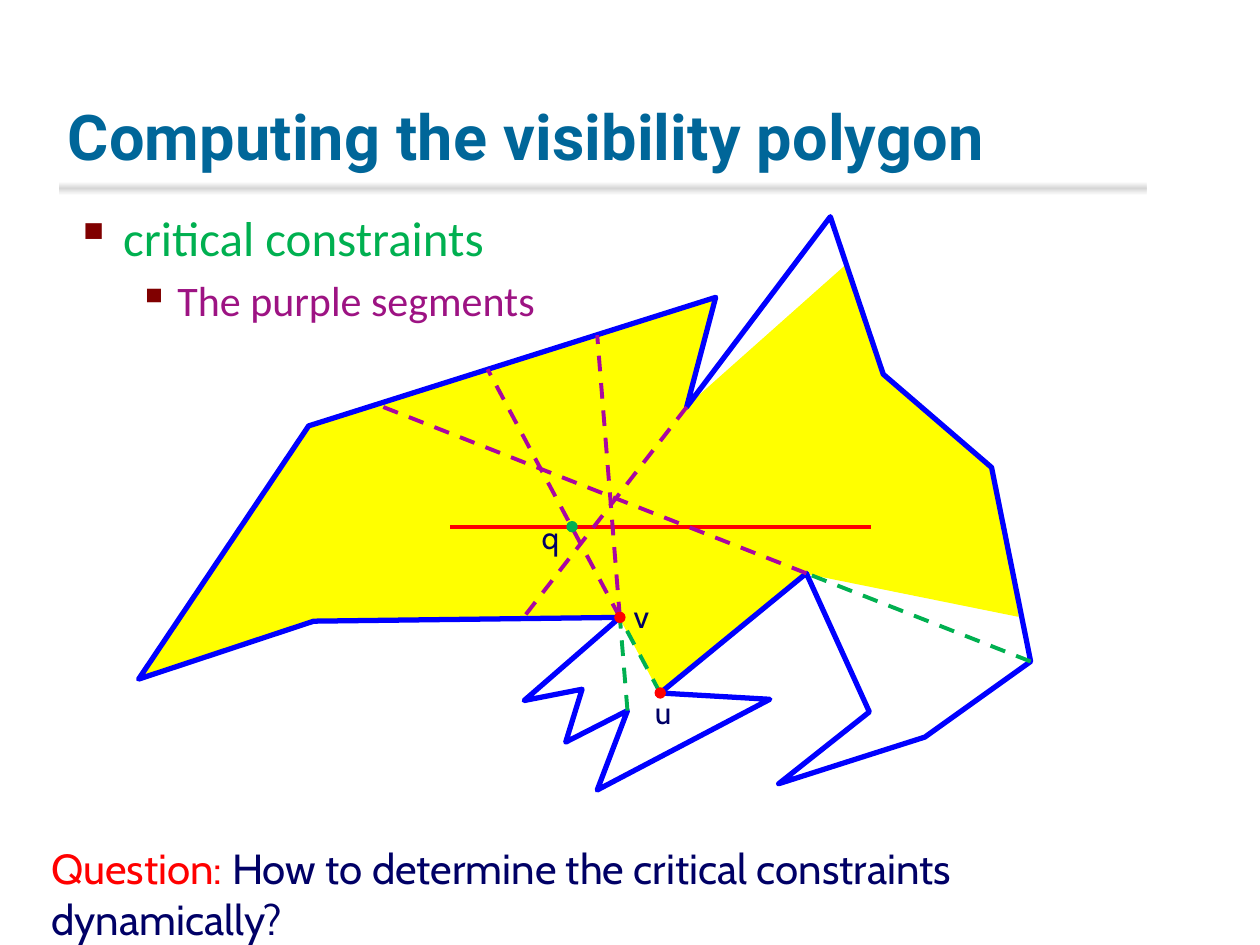
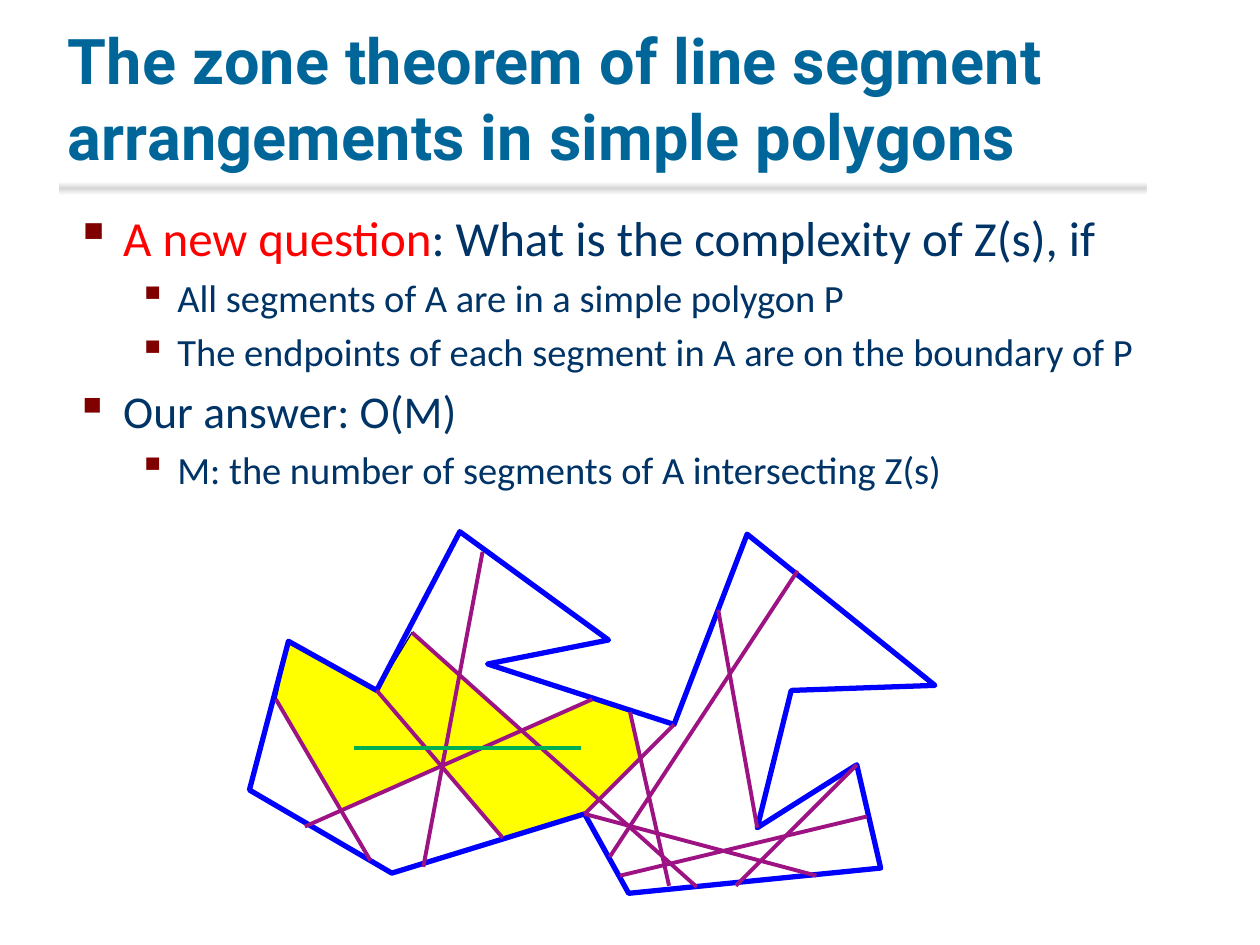
from copy import deepcopy

from lxml import etree
from pptx import Presentation
from pptx.dml.color import RGBColor
from pptx.enum.dml import MSO_LINE
from pptx.enum.shapes import MSO_CONNECTOR, MSO_SHAPE
from pptx.enum.text import MSO_ANCHOR
from pptx.oxml.ns import qn
from pptx.util import Pt

PX = 9144  # EMU per px, 100 px to the inch

TEAL = RGBColor.from_string("006699")
NAVY = RGBColor.from_string("000066")
DARK_BLUE = RGBColor.from_string("003366")
BLUE = RGBColor.from_string("0000FF")
RED = RGBColor.from_string("FF0000")
GREEN = RGBColor.from_string("00B050")
PURPLE = RGBColor.from_string("9D1383")
VIOLET = RGBColor.from_string("A907A1")
MAROON = RGBColor.from_string("800000")
YELLOW = RGBColor.from_string("FFFF00")
WHITE = RGBColor.from_string("FFFFFF")
GRAY = RGBColor.from_string("D6D6D6")

TITLE_BOX = (44, 17, 850, 125)
BODY_BOX = (50, 160, 903, 254)
QUESTION_BOX = (31, 664, 905, 50)
BAND_BOX = (47, 144, 863, 11)
LABEL_SIZE = (33, 40)
DOT = 8
INDENTS = [(38, -38), (81, -31)]  # left margin and first line, by level

TITLE = {"name": "Roboto", "size": Pt(36), "bold": True}
BODY = {"name": "Calibri"}
H1 = {"size": Pt(28)}
H2 = {"size": Pt(26)}
SUB = {"size": Pt(22)}
LABEL = {"name": "Cabin", "size": Pt(18)}
QUESTION = {"name": "Cabin", "size": Pt(24)}

# Points have one-letter names; capitals are the polygon's corners in order.
# A crossing "ABCD" is where line AB meets line CD.
# Paragraphs are (level, runs), runs are (text, colour, format).
SLIDES = [
    {
        "title": "Computing the visibility polygon",
        "body": [
            (0, [("critical constraints", GREEN, H1)]),
            (1, [("The purple segments", PURPLE, {"size": Pt(24)})]),
        ],
        "polygon": "ABCDEFGHIJKLMNOPQRSTU",
        "points": dict(
            A=(249, 493), B=(492, 490), C=(416, 556), D=(462, 547),
            E=(449, 589), F=(498, 564), G=(474, 627), H=(611, 555),
            I=(524, 550), J=(640, 455), K=(690, 565), L=(618, 622),
            M=(734, 585), N=(818, 525), O=(787, 371), P=(701, 297),
            Q=(659, 172), R=(545, 323), S=(568, 236), T=(245, 338),
            U=(110, 539), a=(671, 211), b=(808, 489), c=(357, 418),
            d=(691, 418), h=(414, 492)),
        "crossings": dict(e="FBST", f="NJST", g="IBST", q="IBcd"),
        "region_line": YELLOW,
        "regions": "AUTSRaPObJIB",
        "segments": [(RED, False, "cd"), (GREEN, True, "IB FB NJ"),
                     (VIOLET, True, "Rh Be Jf Bg")],
        "dots": dict(I=RED, B=RED, q=GREEN),
        "labels": dict(u=(510, 545), v=(493, 469), q=(420, 406)),
        "question": [
            ("Question: ", RED, QUESTION),
            ("How to determine the critical constraints dynamically?",
             NAVY, QUESTION)],
    },
    {
        "title": "The zone theorem of line segment arrangements "
                 "in simple polygons",
        "body": [
            (0, [("A new question", RED, H1),
                 (": What is the complexity of Z(s), if", DARK_BLUE, H1)]),
            (1, [("All segments of A are in a simple polygon P",
                  DARK_BLUE, SUB)]),
            (1, [("The endpoints of each segment in A are on the "
                  "boundary of P", DARK_BLUE, SUB)]),
            (0, [("Our answer: O(M)", DARK_BLUE, H2)]),
            (1, [("M: the number of segments of A intersecting Z(s)",
                  DARK_BLUE, SUB)]),
        ],
        "polygon": "ABCDEFGHIJKLMNOP",
        "points": dict(
            A=(311, 693), B=(198, 627), C=(229, 509), D=(299, 548),
            E=(365, 422), F=(483, 508), G=(387, 527), H=(535, 575),
            I=(593, 424), J=(742, 544), K=(628, 548), L=(601, 657),
            M=(680, 607), N=(699, 689), O=(499, 709), P=(464, 646),
            a=(553, 704), b=(336, 688), c=(383, 438), d=(242, 656),
            e=(484, 680), f=(327, 502), g=(219, 555), h=(633, 453),
            j=(531, 703), k=(399, 665), l=(470, 555), m=(500, 565),
            n=(294, 683), o=(648, 695), p=(570, 484), q=(492, 695),
            r=(688, 648), s=(584, 703), t=(281, 594), u=(461, 594)),
        "crossings": dict(v="fadl", w="Dkdl", x="bcfa", y="gndl",
                          z="faPH", i="mjPH"),
        "region_line": NAVY,
        "regions": "vlmiz wvzPk wxv Dwxf gywDC",
        "segments": [
            (PURPLE, False, "fa bc dl eh mj PH Dk gn Po Lp qr sM"),
            (GREEN, False, "tu")],
        "dots": {},
        "labels": {},
        "question": [],
    },
]


def add_text(s, box, fmt, paragraphs):
    """Add a wrapped text box; a level of None means no bullet."""
    tf = s.shapes.add_textbox(*[n * PX for n in box]).text_frame
    tf.word_wrap = True
    for i, (level, runs) in enumerate(paragraphs):
        p = tf.paragraphs[0] if i == 0 else tf.add_paragraph()
        for text, colour, run_fmt in runs:
            r = p.add_run()
            r.text = text
            for name, value in {**fmt, **run_fmt}.items():
                setattr(r.font, name, value)
            r.font.color.rgb = colour
        if level is not None:
            pPr = p._p.get_or_add_pPr()
            for name, n in zip(("marL", "indent"), INDENTS[level]):
                pPr.set(name, str(n * PX))
            before = etree.SubElement(pPr, qn("a:spcBef"))
            etree.SubElement(before, qn("a:spcPct"), val="20000")
            colour = etree.SubElement(pPr, qn("a:buClr"))
            etree.SubElement(colour, qn("a:srgbClr"), val=str(MAROON))
            etree.SubElement(pPr, qn("a:buChar"), char="▪")
    return tf


def add_polygon(s, points, fill, line, width):
    """Add a closed outline; a fill of None leaves it open inside."""
    fb = s.shapes.build_freeform(*points[0], scale=PX)
    fb.add_line_segments(points[1:], close=True)
    sp = fb.convert_to_shape()
    sp.shadow.inherit = False
    if fill is None:
        sp.fill.background()
    else:
        sp.fill.solid()
        sp.fill.fore_color.rgb = fill
    sp.line.color.rgb = line
    sp.line.width = Pt(width)


prs = Presentation()
prs.slide_width = 1000 * PX
prs.slide_height = 750 * PX

for content in SLIDES:
    s = prs.slides.add_slide(prs.slide_layouts[6])

    points = dict(content["points"])
    for name, lines in content["crossings"].items():
        (ax, ay), (bx, by), (cx, cy), (dx, dy) = [points[n] for n in lines]
        ux, uy, vx, vy = bx - ax, by - ay, dx - cx, dy - cy
        t = ((cx - ax) * vy - (cy - ay) * vx) / (ux * vy - uy * vx)
        points[name] = (round(ax + t * ux), round(ay + t * uy))

    # Soft band under the title, white to gray to white
    band = s.shapes.add_shape(MSO_SHAPE.RECTANGLE, *[n * PX for n in BAND_BOX])
    band.shadow.inherit = False
    band.line.fill.background()
    band.fill.gradient()
    band.fill.gradient_angle = 90
    for stop, colour in zip(band.fill.gradient_stops, (WHITE, GRAY)):
        stop.color.rgb = colour
    stops = band._element.spPr.find(".//" + qn("a:gsLst"))
    stops.append(deepcopy(stops[0]))
    for i, stop in enumerate(stops):
        stop.set("pos", str(i * 50000))

    for region in content["regions"].split():
        add_polygon(s, [points[n] for n in region], YELLOW,
                    content["region_line"], 0.75)

    tf = add_text(s, TITLE_BOX, TITLE, [(None, [(content["title"], TEAL, {})])])
    tf.vertical_anchor = MSO_ANCHOR.BOTTOM
    for r in tf.paragraphs[0].runs:
        r._r.get_or_add_rPr().set("spc", "10")
    add_text(s, BODY_BOX, BODY, content["body"])

    add_polygon(s, [points[n] for n in content["polygon"]], None, BLUE, 3)

    for colour, dashed, segments in content["segments"]:
        for start, end in segments.split():
            ends = points[start] + points[end]
            cn = s.shapes.add_connector(MSO_CONNECTOR.STRAIGHT,
                                        *[n * PX for n in ends])
            cn.line.color.rgb = colour
            cn.line.width = Pt(2.25)
            if dashed:
                cn.line.dash_style = MSO_LINE.DASH
            etree.SubElement(cn._element.spPr, qn("a:effectLst"))

    for name, colour in content["dots"].items():
        x, y = [n - DOT // 2 for n in points[name]]
        dot = s.shapes.add_shape(MSO_SHAPE.OVAL,
                                 *[n * PX for n in (x, y, DOT, DOT)])
        dot.shadow.inherit = False
        dot.fill.solid()
        dot.fill.fore_color.rgb = colour
        dot.line.color.rgb = colour
        dot.line.width = Pt(0.75)

    for text, corner in content["labels"].items():
        add_text(s, corner + LABEL_SIZE, LABEL, [(None, [(text, NAVY, {})])])
    if content["question"]:
        add_text(s, QUESTION_BOX, QUESTION, [(None, content["question"])])

prs.save("out.pptx")
